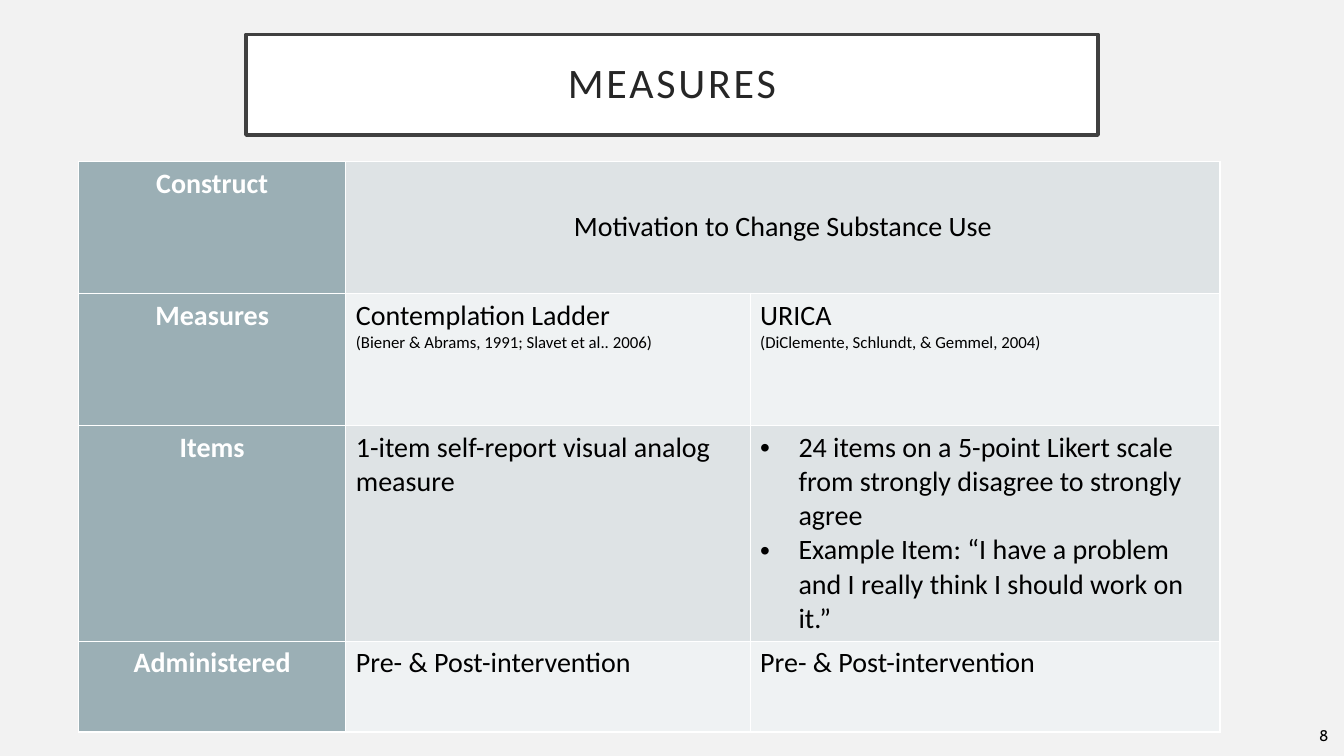
"""Build the slide with the table of motivation measures."""
from lxml import etree
from pptx import Presentation
from pptx.dml.color import RGBColor
from pptx.enum.shapes import MSO_SHAPE
from pptx.enum.text import MSO_ANCHOR, PP_ALIGN
from pptx.oxml.ns import qn
from pptx.util import Inches, Pt

RECTANGLE, OVAL = MSO_SHAPE.RECTANGLE, MSO_SHAPE.OVAL
MIDDLE, CENTER, LEFT = MSO_ANCHOR.MIDDLE, PP_ALIGN.CENTER, PP_ALIGN.LEFT
BACKGROUND = RGBColor(0xF2, 0xF2, 0xF2)
WHITE = RGBColor(0xFF, 0xFF, 0xFF)
BLACK = RGBColor(0, 0, 0)
FRAME = RGBColor(0x40, 0x40, 0x40)
TITLE_TEXT = RGBColor(0x26, 0x26, 0x26)
LABEL_FILL = RGBColor(0x9B, 0xAF, 0xB5)
BANDS = [RGBColor(0xDE, 0xE3, 0xE5), RGBColor(0xEF, 0xF2, 0xF3)]

COLUMN_WIDTHS = [2.65, 4.01, 4.66]
ROW_HEIGHTS = [1.31, 1.31, 1.98, 0.9]
ROWS = [
    ["Construct", "Motivation to Change Substance Use", ""],
    ["Measures",
     "Contemplation Ladder\n(Biener & Abrams, 1991; Slavet et al.. 2006)",
     "URICA\n(DiClemente, Schlundt, & Gemmel, 2004)"],
    ["Items", "1-item self-report visual analog measure",
     "24 items on a 5-point Likert scale from strongly disagree to strongly agree\n"
     "Example Item: “I have a problem and I really think I should work on it.”"],
    ["Administered", "Pre- & Post-intervention", "Pre- & Post-intervention"],
]


def format_paragraph(paragraph, size, color, alignment, font="Calibri", bold=False):
    paragraph.alignment = alignment
    for run in paragraph.runs:
        run.font.name = font
        run.font.size = Pt(size)
        run.font.bold = bold
        run.font.color.rgb = color


def add_label(kind, left, top, width, height, text, inset_x, inset_y):
    shape = slide.shapes.add_shape(
        kind, Inches(left), Inches(top), Inches(width), Inches(height))
    shape.shadow.inherit = False
    frame = shape.text_frame
    frame.margin_left = frame.margin_right = Inches(inset_x)
    frame.margin_top = frame.margin_bottom = Inches(inset_y)
    frame.vertical_anchor = MIDDLE
    frame.word_wrap = True
    frame.text = text
    return shape


presentation = Presentation()
presentation.slide_width = Inches(13.33)
presentation.slide_height = Inches(7.5)
slide = presentation.slides.add_slide(presentation.slide_layouts[6])
slide.background.fill.solid()
slide.background.fill.fore_color.rgb = BACKGROUND

page_number = add_label(OVAL, 12.93, 7.1, 0.4, 0.4, "8", 0.02, 0.05)
page_number.fill.background()
page_number.line.fill.background()
format_paragraph(page_number.text_frame.paragraphs[0], 11, BLACK, CENTER, "Cabin")

title = add_label(RECTANGLE, 2.44, 0.34, 8.45, 1, "MEASURES", 0.2, 0.2)
title.fill.solid()
title.fill.fore_color.rgb = WHITE
title.line.color.rgb = FRAME
title.line.width = Pt(2.5)
title_paragraph = title.text_frame.paragraphs[0]
format_paragraph(title_paragraph, 30, TITLE_TEXT, CENTER)
title_paragraph.line_spacing = 0.9
title_paragraph.runs[0].font._element.set("spc", "200")

table = slide.shapes.add_table(
    len(ROWS), len(COLUMN_WIDTHS), Inches(0.78), Inches(1.6),
    Inches(sum(COLUMN_WIDTHS)), Inches(sum(ROW_HEIGHTS))).table
table.first_row = False
table.horz_banding = False
for column, width in zip(table.columns, COLUMN_WIDTHS):
    column.width = Inches(width)
for row, height in zip(table.rows, ROW_HEIGHTS):
    row.height = Inches(height)
table.cell(0, 1).merge(table.cell(0, 2))

for row_index, texts in enumerate(ROWS):
    for column_index, text in enumerate(texts):
        cell = table.cell(row_index, column_index)
        is_label = column_index == 0
        cell.fill.solid()
        cell.fill.fore_color.rgb = LABEL_FILL if is_label else BANDS[row_index % 2]
        properties = cell._tc.get_or_add_tcPr()
        for position, side in enumerate(["lnL", "lnR", "lnT", "lnB"]):
            border = etree.Element(qn(f"a:{side}"), w=str(Pt(1)))
            border_fill = etree.SubElement(border, qn("a:solidFill"))
            etree.SubElement(border_fill, qn("a:srgbClr"), val=str(WHITE))
            properties.insert(position, border)
        if not text:
            continue
        cell.text_frame.text = text
        for line, paragraph in enumerate(cell.text_frame.paragraphs):
            is_citation = row_index == 1 and line == 1
            format_paragraph(
                paragraph, 12 if is_citation else 20,
                WHITE if is_label else BLACK,
                CENTER if is_label or row_index == 0 else LEFT, bold=is_label)

table.cell(0, 1).vertical_anchor = MIDDLE
for paragraph in table.cell(2, 2).text_frame.paragraphs:
    paragraph_properties = paragraph._p.get_or_add_pPr()
    paragraph_properties.set("marL", str(Inches(0.38)))
    paragraph_properties.set("indent", str(Inches(-0.38)))
    etree.SubElement(paragraph_properties, qn("a:buFont"), typeface="Arial")
    etree.SubElement(paragraph_properties, qn("a:buChar"), char="•")

presentation.save("out.pptx")
